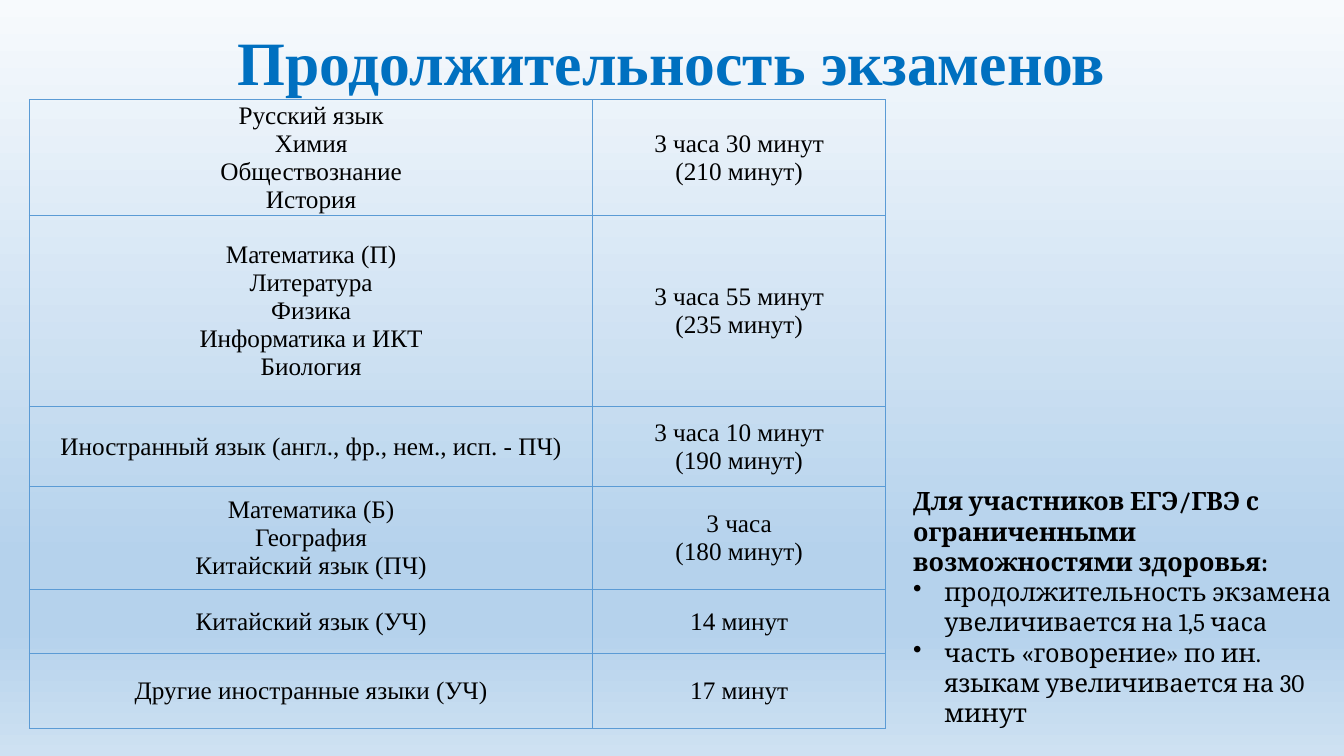
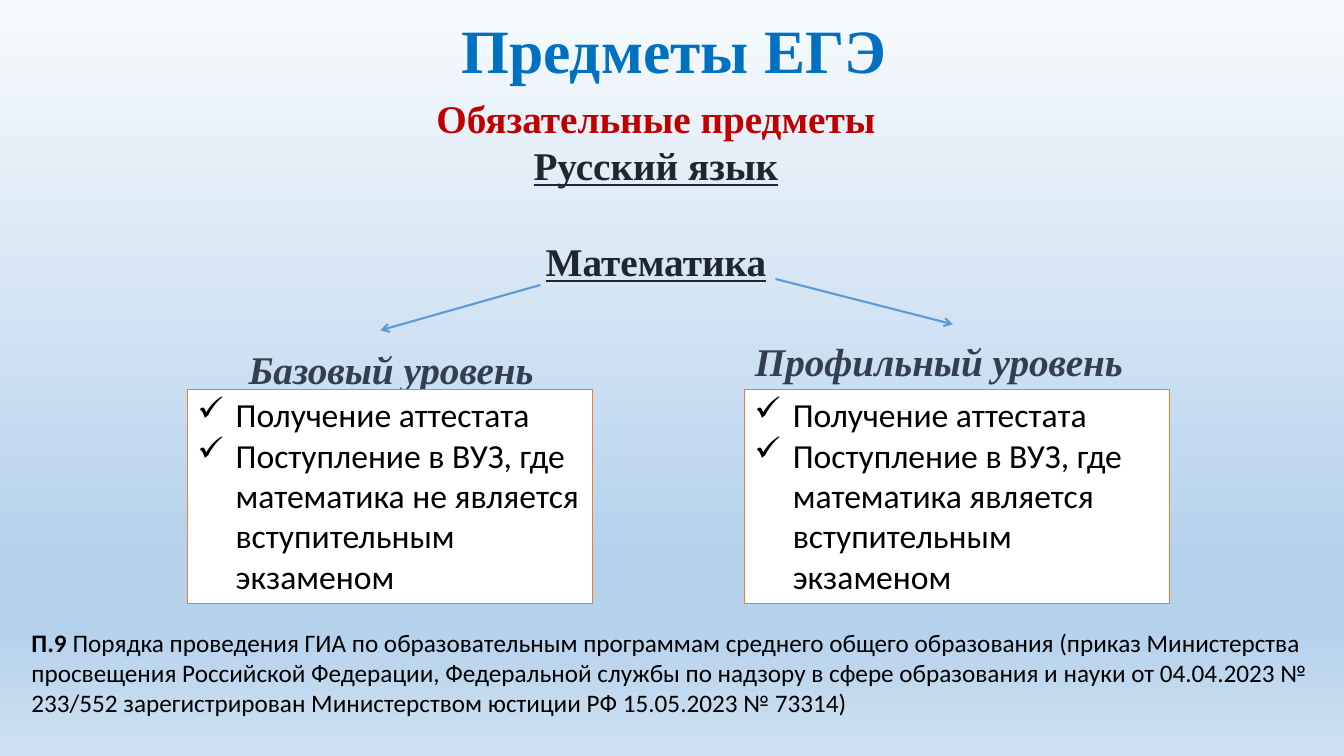
from pptx import Presentation
from pptx.dml.color import RGBColor
from pptx.enum.shapes import MSO_CONNECTOR, MSO_SHAPE
from pptx.enum.text import MSO_ANCHOR, PP_ALIGN
from pptx.oxml import parse_xml
from pptx.oxml.ns import nsdecls
from pptx.util import Inches, Pt

BLUE = RGBColor(0x00, 0x70, 0xC0)
SKY = RGBColor(0x5B, 0x9B, 0xD5)
RED = RGBColor(0xC0, 0x00, 0x00)
INK = RGBColor(0x1F, 0x26, 0x2D)
SLATE = RGBColor(0x33, 0x3F, 0x50)
ORANGE = RGBColor(0xED, 0x7D, 0x31)
WHITE = RGBColor(0xFF, 0xFF, 0xFF)
BLACK = RGBColor(0, 0, 0)
SERIF = "Times New Roman"

# Text formats
HEAD = {"name": SERIF, "size": Pt(44), "bold": True}
CELL = {"name": SERIF, "size": Pt(18)}
NOTE = {"name": "Cambria", "size": Pt(18)}
TOPIC = {"name": SERIF, "size": Pt(28), "bold": True}
LEVEL = {**TOPIC, "italic": True}
ITEM = {"name": "Calibri", "size": Pt(24)}
FOOT = {"name": "Calibri", "size": Pt(18)}
MID = {"alignment": PP_ALIGN.CENTER}
LEFT = {"alignment": PP_ALIGN.LEFT}
TALL = {**MID, "line_spacing": 1.5}

deck = Presentation()
deck.slide_width, deck.slide_height = Inches(13.33), Inches(7.5)
COL, ROW = deck.slide_width / 100, deck.slide_height / 100


def area(x, y, w, h):
    """Turn shares of the slide, in percent, into lengths."""
    return int(x * COL), int(y * ROW), int(w * COL), int(h * ROW)


def write(frame, text, font, tint, para, mark=None, dent=0):
    """Add one paragraph, using the first one while it is empty."""
    line = frame.paragraphs[0]
    if line.runs:
        line = frame.add_paragraph()
    for key, val in para.items():
        setattr(line, key, val)
    run = line.add_run()
    run.text = text
    for key, val in font.items():
        setattr(run.font, key, val)
    run.font.color.rgb = tint
    if mark:
        props = line._p.get_or_add_pPr()
        props.set("marL", str(Inches(dent)))
        props.set("indent", str(-Inches(dent)))
        props.append(parse_xml(f'<a:buChar {nsdecls("a")} char="{mark}"/>'))
    return line


# Shared background on the master
STOPS = [(0, "F7FAFD"), (74, "B5D2EC"), (83, "B5D2EC"), (100, "CEE1F2")]
stops = "".join(f'<a:gs pos="{pos * 1000}"><a:srgbClr val="{hue}"/></a:gs>'
                for pos, hue in STOPS)
base = deck.slide_master._element.cSld
for old in base.findall(base.bg.tag if base.bg is not None else "none"):
    base.remove(old)
base.insert(0, parse_xml(
    f'<p:bg {nsdecls("p", "a")}><p:bgPr><a:gradFill rotWithShape="1"><a:gsLst>{stops}'
    '</a:gsLst><a:lin ang="5400000" scaled="0"/></a:gradFill><a:effectLst/>'
    '</p:bgPr></p:bg>'))

# Slides with their titles
slides = []
for text, place in [("Продолжительность экзаменов", (0, 0.3, 100, 15.6)),
                    ("Предметы ЕГЭ", (31.4, 0.8, 37.5, 11.2))]:
    slide = deck.slides.add_slide(deck.slide_layouts[5])
    title = slide.shapes.title
    title.left, title.top, title.width, title.height = area(*place)
    title.text_frame.vertical_anchor = MSO_ANCHOR.MIDDLE
    write(title.text_frame, text, HEAD, BLUE, MID)
    slides.append(slide)
times, exams = slides

# Table of exam lengths: row height, subjects, time
ROWS = [
    (15.2, ["Русский язык", "Химия", "Обществознание", "История"],
     ["3 часа 30 минут", "(210 минут)"]),
    (25.3, ["Математика (П)", "Литература", "Физика", "Информатика и ИКТ", "Биология"],
     ["3 часа 55 минут", "(235 минут)"]),
    (10.6, ["Иностранный язык (англ., фр., нем., исп. - ПЧ)"],
     ["3 часа 10 минут", "(190 минут)"]),
    (13.6, ["Математика (Б)", "География", "Китайский язык (ПЧ)"],
     ["3 часа", "(180 минут)"]),
    (8.5, ["Китайский язык (УЧ)"], ["14 минут"]),
    (9.9, ["Другие иностранные языки (УЧ)"], ["17 минут"]),
]
WIDTHS = [41.9, 21.8]
high = sum(row[0] for row in ROWS)
grid = times.shapes.add_table(len(ROWS), 2, *area(2.2, 13.2, sum(WIDTHS), high)).table
grid.first_row = grid.horz_banding = False
for col, wide in zip(grid.columns, WIDTHS):
    col.width = int(wide * COL)
for r, (tall, *texts) in enumerate(ROWS):
    grid.rows[r].height = int(tall * ROW)
    for c, lines in enumerate(texts):
        cell = grid.cell(r, c)
        cell.vertical_anchor = MSO_ANCHOR.MIDDLE
        for side in ("left", "right", "top", "bottom"):
            setattr(cell, f"margin_{side}", Inches(0.02))
        for text in lines:
            write(cell.text_frame, text, CELL, BLACK, MID)
        props = cell._tc.get_or_add_tcPr()
        for side in "LRTB":
            props.append(parse_xml(
                f'<a:ln{side} {nsdecls("a")} w="{Pt(1)}"><a:solidFill>'
                f'<a:srgbClr val="{SKY}"/></a:solidFill></a:ln{side}>'))
        cell.fill.background()

# Note beside the table
note = times.shapes.add_textbox(*area(67.2, 63.6, 32.8, 33.3)).text_frame
note.word_wrap = True
write(note, "Для участников ЕГЭ/ГВЭ с ограниченными возможностями здоровья:",
      {**NOTE, "bold": True}, BLACK, LEFT)
for text in ["продолжительность экзамена увеличивается на 1,5 часа",
             "часть «говорение» по ин. языкам увеличивается на 30 минут"]:
    write(note, text, NOTE, BLACK, LEFT, "•", 0.31)

# Required subjects
topics = exams.shapes.add_textbox(*area(23.4, 8.7, 50.8, 29.6)).text_frame
topics.word_wrap = True
under = {**TOPIC, "underline": True}
write(topics, "Обязательные предметы", TOPIC, RED, TALL)
write(topics, "Русский язык", under, INK, MID)
write(topics, "Математика", under, INK, {**MID, "space_before": Pt(35)})

# Two levels of maths: label, arrow and box
LEVELS = [
    ("Базовый уровень", (15.8, 41.9, 26.6, 10.8), (40.2, 37.7, 28.3, 43.7),
     (13.95, 51.5, 30.15, 28.3), "не является"),
    ("Профильный уровень", (52.7, 40.8, 34.3, 10.8), (57.7, 36.9, 70.9, 42.9),
     (55.4, 51.5, 31.6, 28.3), "является"),
]
for name, place, ends, room, verb in LEVELS:
    label = exams.shapes.add_textbox(*area(*place)).text_frame
    label.word_wrap = True
    write(label, name, LEVEL, SLATE, TALL)

    arrow = exams.shapes.add_connector(MSO_CONNECTOR.STRAIGHT, *area(*ends))
    arrow.line.color.rgb, arrow.line.width = SKY, Pt(1.5)
    arrow.line._get_or_add_ln().append(
        parse_xml(f'<a:tailEnd {nsdecls("a")} type="arrow"/>'))
    arrow._element.spPr.append(parse_xml(f'<a:effectLst {nsdecls("a")}/>'))

    box = exams.shapes.add_shape(MSO_SHAPE.RECTANGLE, *area(*room))
    box.shadow.inherit = False
    box.fill.solid()
    box.fill.fore_color.rgb = WHITE
    box.line.color.rgb, box.line.width = ORANGE, Pt(1)
    box.text_frame.vertical_anchor = MSO_ANCHOR.TOP
    for text in ["Получение аттестата",
                 f"Поступление в ВУЗ, где математика {verb} вступительным экзаменом"]:
        write(box.text_frame, text, ITEM, BLACK, LEFT, "✓", 0.38)

# Legal basis
foot = exams.shapes.add_textbox(*area(1.6, 82.3, 96.8, 13.5)).text_frame
foot.word_wrap = True
line = write(foot, "П.9 ", {**FOOT, "bold": True}, BLACK, LEFT)
rest = line.add_run()
rest.text = ("Порядка проведения ГИА по образовательным программам среднего общего "
             "образования (приказ Министерства просвещения Российской Федерации, "
             "Федеральной службы по надзору в сфере образования и науки от 04.04.2023 "
             "№ 233/552 зарегистрирован Министерством юстиции РФ 15.05.2023 № 73314)")
for key, val in FOOT.items():
    setattr(rest.font, key, val)
rest.font.color.rgb = BLACK

deck.save("out.pptx")
